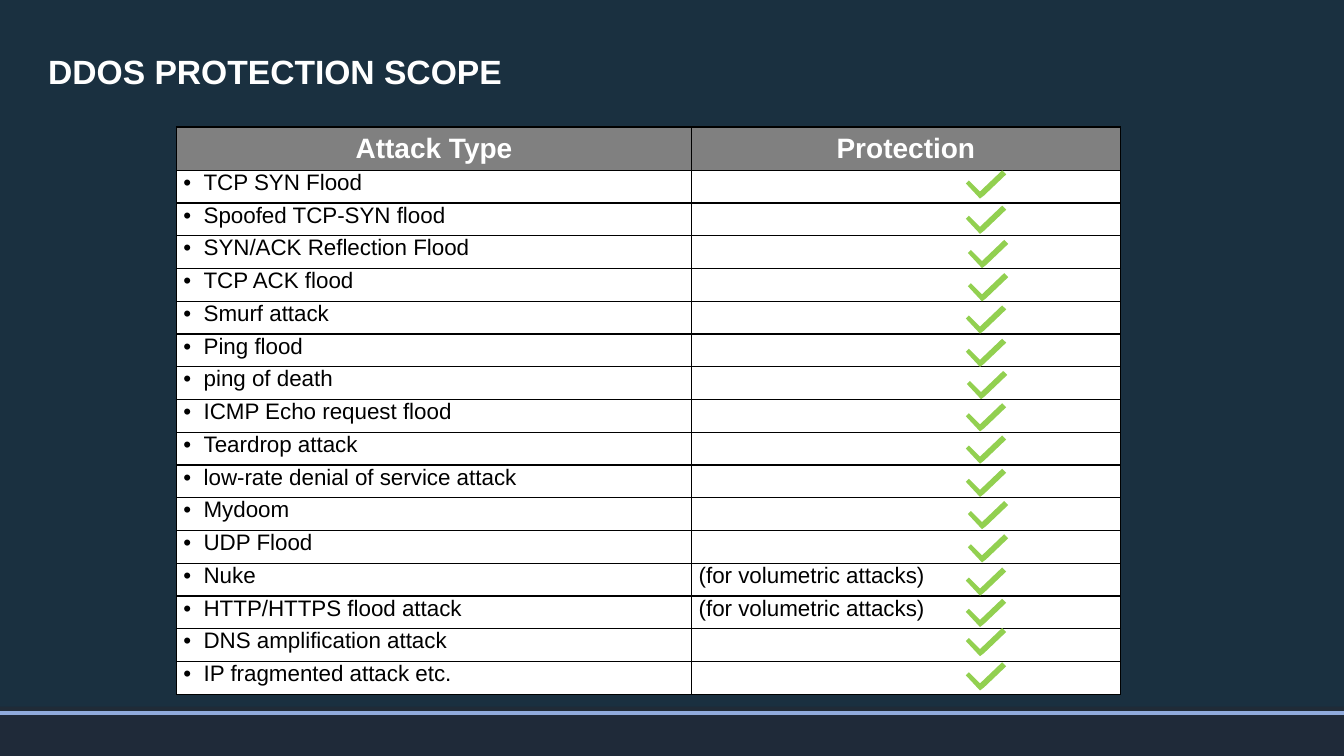
from typing import NamedTuple

from lxml import etree
from pptx import Presentation
from pptx import util as u
from pptx.dml.color import RGBColor
from pptx.enum import shapes, text
from pptx.oxml.ns import qn

WIDTH, HEIGHT = 13.33, 7.5
FONT = "Arial"
WHITE, BLACK, GREY, GREEN = "FFFFFF", "000000", "808080", "92D050"
HEADER_HEIGHT, ROW_HEIGHT = 0.43, 0.325
COLUMN_WIDTHS = (5.11, 4.25)
BULLET_INDENT = 0.2
# Outline of a check mark, in hundredths of an inch from its top left
TICK = ((36, 0), (14, 21), (3, 10), (0, 13), (14, 28), (18, 25), (40, 4))


class Band(NamedTuple):
    top: float
    height: float
    color: str
    opacity: int


class Attack(NamedTuple):
    name: str
    tick_left: float
    tick_top: float
    note: str = ""


BANDS = (
    Band(0, HEIGHT, "4472C4", 100),
    Band(0, HEIGHT, "10253F", 90),
    Band(0, 7.07, "1B3140", 95),
    Band(7.01, 0.49, "222A35", 80),
)
VOLUMETRIC = "(for volumetric attacks)"
ATTACKS = (
    Attack("TCP SYN Flood", 9.58, 1.69),
    Attack("Spoofed TCP-SYN flood", 9.58, 2.04),
    Attack("SYN/ACK Reflection Flood", 9.6, 2.38),
    Attack("TCP ACK flood", 9.6, 2.71),
    Attack("Smurf attack", 9.58, 3.03),
    Attack("Ping flood", 9.58, 3.36),
    Attack("ping of death", 9.59, 3.68),
    Attack("ICMP Echo request flood", 9.58, 4),
    Attack("Teardrop attack", 9.58, 4.32),
    Attack("low-rate denial of service attack", 9.58, 4.65),
    Attack("Mydoom", 9.6, 4.97),
    Attack("UDP Flood", 9.6, 5.3),
    Attack("Nuke", 9.58, 5.63, VOLUMETRIC),
    Attack("HTTP/HTTPS flood attack", 9.58, 5.94, VOLUMETRIC),
    Attack("DNS amplification attack", 9.58, 6.23),
    Attack("IP fragmented attack etc.", 9.58, 6.57),
)


def paint(format_part, color: str) -> None:
    """Give a fill a solid colour."""
    format_part.solid()
    format_part.fore_color.rgb = RGBColor.from_string(color)


def write(frame, words: str, *, size: float, color: str, bold: bool = False,
          align=text.PP_ALIGN.LEFT, bullet: bool = False) -> None:
    para = frame.paragraphs[0]
    para.alignment = align
    if bullet:
        properties = para._p.get_or_add_pPr()
        indent = u.Inches(BULLET_INDENT)
        properties.set("marL", str(indent))
        properties.set("indent", str(-indent))
        etree.SubElement(properties, qn("a:buFont"), typeface=FONT)
        etree.SubElement(properties, qn("a:buChar"), char="•")
    para.font.size = u.Pt(size)
    if words:
        span = para.add_run()
        span.text = words
        span.font.name = FONT
        span.font.size = u.Pt(size)
        span.font.bold = bold
        paint(span.font.fill, color)


def add_band(page, band: Band) -> None:
    box = page.shapes.add_shape(
        shapes.MSO_SHAPE.RECTANGLE, 0, u.Inches(band.top),
        u.Inches(WIDTH), u.Inches(band.height))
    box.shadow.inherit = False
    box.line.fill.background()
    paint(box.fill, band.color)
    if band.opacity < 100:
        shade = box.fill._xPr.find(".//" + qn("a:srgbClr"))
        etree.SubElement(shade, qn("a:alpha"), val=str(band.opacity * 1000))


def add_footer_rule(page) -> None:
    rule = page.shapes.add_connector(
        shapes.MSO_CONNECTOR.STRAIGHT, 0, u.Inches(7.07),
        u.Inches(WIDTH), u.Inches(7.07))
    paint(rule.line.fill, "8FAADC")
    rule.line.width = u.Pt(3)
    etree.SubElement(rule._element.spPr, qn("a:effectLst"))


def add_title(page) -> None:
    box = page.shapes.add_textbox(
        u.Inches(0.38), u.Inches(0.46), u.Inches(11), u.Inches(0.5))
    frame = box.text_frame
    frame.word_wrap = True
    frame.vertical_anchor = text.MSO_ANCHOR.MIDDLE
    write(frame, "DDOS PROTECTION SCOPE", size=24, color=WHITE, bold=True)


def style_cell(cell, fill: str) -> None:
    """Set margins, black borders and fill of a cell."""
    cell.margin_left = cell.margin_right = u.Inches(0.07)
    cell.margin_top = cell.margin_bottom = 0
    properties = cell._tc.get_or_add_tcPr()
    for side in ("a:lnL", "a:lnR", "a:lnT", "a:lnB"):
        border = etree.SubElement(properties, qn(side), w=str(u.Pt(1)))
        solid = etree.SubElement(border, qn("a:solidFill"))
        etree.SubElement(solid, qn("a:srgbClr"), val=BLACK)
    paint(cell.fill, fill)


def add_attack_table(page) -> None:
    height = HEADER_HEIGHT + ROW_HEIGHT * len(ATTACKS)
    table = page.shapes.add_table(
        len(ATTACKS) + 1, len(COLUMN_WIDTHS), u.Inches(1.75), u.Inches(1.26),
        u.Inches(sum(COLUMN_WIDTHS)), u.Inches(height)).table
    table.first_row = table.horz_banding = False
    for column, width in zip(table.columns, COLUMN_WIDTHS):
        column.width = u.Inches(width)
    for row in table.rows:
        row.height = u.Inches(ROW_HEIGHT)
    table.rows[0].height = u.Inches(HEADER_HEIGHT)

    for cell, heading in zip(table.rows[0].cells, ("Attack Type", "Protection")):
        style_cell(cell, GREY)
        cell.vertical_anchor = text.MSO_ANCHOR.MIDDLE
        write(cell.text_frame, heading, size=20, color=WHITE, bold=True,
              align=text.PP_ALIGN.CENTER)
    for index, attack in enumerate(ATTACKS, start=1):
        for column, words in enumerate((attack.name, attack.note)):
            cell = table.cell(index, column)
            style_cell(cell, WHITE)
            write(cell.text_frame, words, size=16, color=BLACK, bullet=column == 0)


def add_tick(page, attack: Attack) -> None:
    builder = page.shapes.build_freeform(*TICK[0], scale=u.Inches(0.01))
    builder.add_line_segments(TICK[1:], close=True)
    tick = builder.convert_to_shape(
        u.Inches(attack.tick_left), u.Inches(attack.tick_top))
    tick.shadow.inherit = False
    tick.line.fill.background()
    paint(tick.fill, GREEN)


def main() -> None:
    deck = Presentation()
    deck.slide_width, deck.slide_height = u.Inches(WIDTH), u.Inches(HEIGHT)
    page = deck.slides.add_slide(deck.slide_layouts[6])
    for band in BANDS:
        add_band(page, band)
    add_footer_rule(page)
    add_title(page)
    add_attack_table(page)
    for attack in ATTACKS:
        add_tick(page, attack)
    deck.save("out.pptx")


if __name__ == "__main__":
    main()
